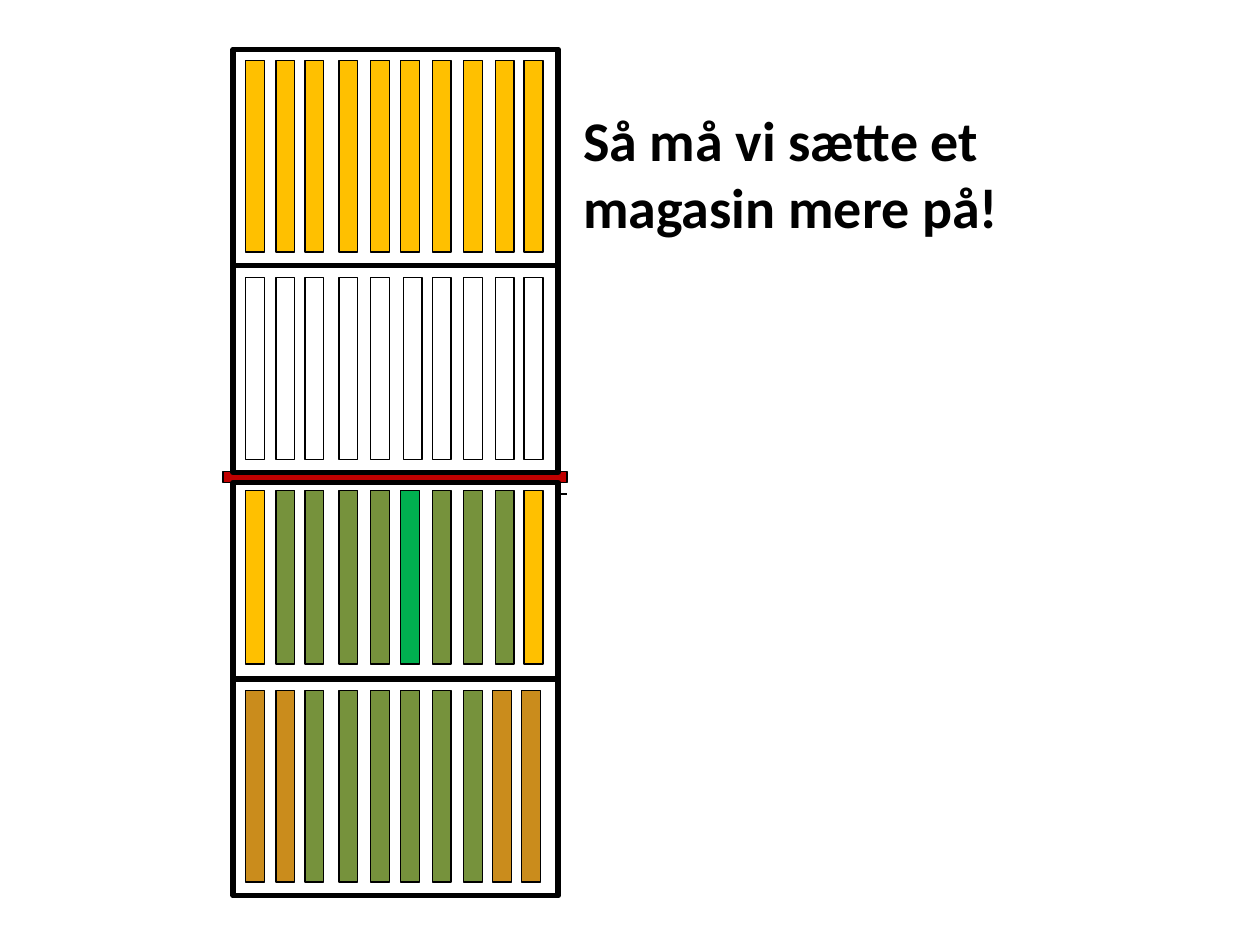
from dataclasses import dataclass, field

from pptx import Presentation
from pptx.dml.color import RGBColor
from pptx.enum.shapes import MSO_SHAPE
from pptx.enum.text import MSO_AUTO_SIZE
from pptx.util import Inches, Pt

BLACK = RGBColor(0x00, 0x00, 0x00)
WHITE = RGBColor(0xFF, 0xFF, 0xFF)
RED = RGBColor(0xC0, 0x00, 0x00)
HONEY = RGBColor(0xFF, 0xC0, 0x00)
BROOD = RGBColor(0x76, 0x92, 0x3C)
QUEEN = RGBColor(0x00, 0xB0, 0x50)
BROWN = RGBColor(0xCA, 0x8C, 0x1C)

SLIDE_WIDTH, SLIDE_HEIGHT = Inches(10), Inches(7.5)
GRID_COLUMNS, GRID_ROWS = 100, 75
BOX_LEFT, BOX_WIDTH = 18.5, 25.8
FRAME_LEFTS = (19.5, 21.9, 24.2, 26.9, 29.4, 31.8, 34.3, 36.8, 39.3, 41.6)
FRAME_WIDTH = 1.5
HEADLINE_FONT = {"name": "Calibri", "size": Pt(32), "bold": True}


@dataclass(frozen=True)
class Area:
    left: float
    top: float
    width: float
    height: float

    def lengths(self) -> tuple[int, int, int, int]:
        column, row = SLIDE_WIDTH / GRID_COLUMNS, SLIDE_HEIGHT / GRID_ROWS
        return (round(self.left * column), round(self.top * row),
                round(self.width * column), round(self.height * row))


@dataclass(frozen=True)
class HiveBox:
    top: float
    height: float
    frame_top: float
    frame_height: float
    colours: tuple[RGBColor | None, ...]
    shifts: dict[int, float] = field(default_factory=dict)


HIVE_BOXES = (
    HiveBox(53.9, 17.2, 54.8, 15.2, (BROWN,) * 2 + (BROOD,) * 6 + (BROWN,) * 2,
            {8: -0.2, 9: -0.2}),
    HiveBox(38.3, 15.6, 38.9, 13.8,
            (HONEY,) + (BROOD,) * 4 + (QUEEN,) + (BROOD,) * 3 + (HONEY,)),
    HiveBox(3.9, 17.2, 4.8, 15.2, (HONEY,) * 10),
    HiveBox(21.1, 16.4, 22, 14.5, (None,) * 10, {5: 0.2}),
)


def draw_shape(shapes, kind: MSO_SHAPE, area: Area, colour: RGBColor | None,
               line_width: float = 0.75):
    shape = shapes.add_shape(kind, *area.lengths())
    shape.shadow.inherit = False
    if colour is None:
        shape.fill.background()
    else:
        shape.fill.solid()
        shape.fill.fore_color.rgb = colour
    shape.line.color.rgb = BLACK
    shape.line.width = Pt(line_width)
    return shape


def draw_excluder(page) -> None:
    excluder = draw_shape(page.shapes, MSO_SHAPE.LINE_CALLOUT_1,
                          Area(17.7, 37.4, 27.3, 0.9), RED)
    for index, value in enumerate((2, 0.04, 2, 1)):
        excluder.adjustments[index] = value


def draw_hive_box(page, box: HiveBox) -> None:
    group = page.shapes.add_group_shape()
    draw_shape(group.shapes, MSO_SHAPE.RECTANGLE,
               Area(BOX_LEFT, box.top, BOX_WIDTH, box.height), WHITE, 3)
    for index, (left, colour) in enumerate(zip(FRAME_LEFTS, box.colours)):
        area = Area(left + box.shifts.get(index, 0), box.frame_top,
                    FRAME_WIDTH, box.frame_height)
        draw_shape(group.shapes, MSO_SHAPE.RECTANGLE, area, colour)


def draw_headline(page, text: str, area: Area) -> None:
    frame = page.shapes.add_textbox(*area.lengths()).text_frame
    frame.word_wrap = True
    frame.auto_size = MSO_AUTO_SIZE.SHAPE_TO_FIT_TEXT
    span = frame.paragraphs[0].add_run()
    span.text = text
    for name, value in HEADLINE_FONT.items():
        setattr(span.font, name, value)
    span.font.color.rgb = BLACK


def main() -> None:
    deck = Presentation()
    deck.slide_width, deck.slide_height = SLIDE_WIDTH, SLIDE_HEIGHT
    page = deck.slides.add_slide(deck.slide_layouts[6])
    draw_excluder(page)
    for box in HIVE_BOXES:
        draw_hive_box(page, box)
    draw_headline(page, "Så må vi sætte et magasin mere på!",
                  Area(45.3, 7.9, 47.7, 11.8))
    deck.save("out.pptx")


if __name__ == "__main__":
    main()
